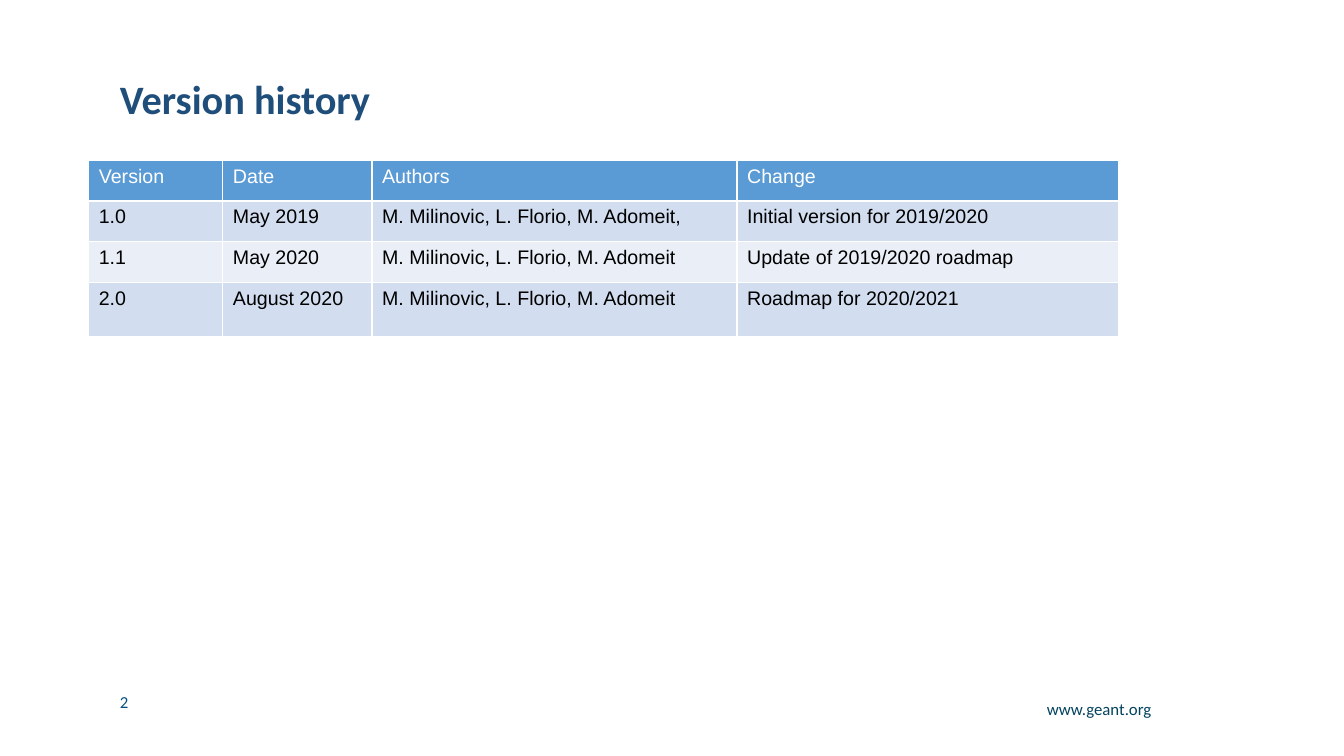
from lxml import etree
from pptx import Presentation, util as u
from pptx.dml.color import RGBColor
from pptx.enum import text
from pptx.oxml.ns import qn

HUES = {
    "title": "1E4E79", "page": "065081", "site": "03435F",
    "head": "5B9BD5", "odd": "D2DEEF", "even": "EAEFF7",
    "white": "FFFFFF", "black": "000000",
}


class Deck:
    """Holds the style and the current slide; lengths are percent of the slide."""

    def __init__(self):
        self.prs = Presentation()
        self.prs.slide_width = u.Inches(13.33)
        self.prs.slide_height = u.Inches(7.5)
        self.slide = self.prs.slides.add_slide(self.prs.slide_layouts[6])

    def wide(self, share):
        return int(self.prs.slide_width * share / 100)

    def high(self, share):
        return int(self.prs.slide_height * share / 100)

    def hue(self, name):
        return RGBColor.from_string(HUES[name])

    def style(self, para, face, size, hue, bold=False):
        for run in para.runs:
            run.font.name = face
            run.font.size = u.Pt(size)
            run.font.bold = bold
            run.font.color.rgb = self.hue(hue)

    def label(self, words, x, y, w, h, size, hue, bold=False,
              align=text.PP_ALIGN.LEFT, anchor=text.MSO_ANCHOR.TOP, space=1.0):
        box = self.slide.shapes.add_textbox(
            self.wide(x), self.high(y), self.wide(w), self.high(h))
        frame = box.text_frame
        frame.word_wrap = True
        frame.vertical_anchor = anchor
        frame.text = words
        para = frame.paragraphs[0]
        para.alignment = align
        para.line_spacing = space
        self.style(para, "Calibri", size, hue, bold)

    def border(self, cell, hue, width):
        props = cell._tc.get_or_add_tcPr()
        for side in ("lnL", "lnR", "lnT", "lnB"):
            line = etree.SubElement(props, qn("a:" + side), w=str(u.Pt(width)))
            fill = etree.SubElement(line, qn("a:solidFill"))
            etree.SubElement(fill, qn("a:srgbClr"), val=HUES[hue])

    def table(self, data, x, y, cols, rows):
        grid = self.slide.shapes.add_table(
            len(rows), len(cols), self.wide(x), self.high(y),
            self.wide(sum(cols)), self.high(sum(rows))).table
        for col, share in zip(grid.columns, cols):
            col.width = self.wide(share)
        for row, share in zip(grid.rows, rows):
            row.height = self.high(share)
        for r, line in enumerate(data):
            back = "head" if r == 0 else "odd" if r % 2 else "even"
            for c, words in enumerate(line):
                cell = grid.cell(r, c)
                self.border(cell, "white", 1)
                cell.fill.solid()
                cell.fill.fore_color.rgb = self.hue(back)
                cell.text_frame.text = words
                self.style(cell.text_frame.paragraphs[0], "Arial", 14,
                           "black" if r else "white")


def main():
    deck = Deck()
    left = 8.18

    # Title
    deck.label("Version history", left, 10.27, 81.17, 6.27, 28.8, "title",
               bold=True, anchor=text.MSO_ANCHOR.MIDDLE, space=0.9)

    # Version table
    team = "M. Milinovic, L. Florio, M. Adomeit"
    data = [
        ("Version", "Date", "Authors", "Change"),
        ("1.0", "May 2019", team + ",", "Initial version for 2019/2020"),
        ("1.1", "May 2020", team, "Update of 2019/2020 roadmap"),
        ("2.0", "August 2020", team, "Roadmap for 2020/2021"),
    ]
    deck.table(data, 6.6, 21.2, cols=(9.98, 11.1, 27.16, 28.43),
               rows=[5.4] * 3 + [7.2])

    # Footer
    deck.label("2", left, 90.8, 10.88, 4, 12, "page")
    deck.label("www.geant.org", 77.04, 91.73, 9.38, 4, 12, "site",
               align=text.PP_ALIGN.RIGHT)

    deck.prs.save("out.pptx")


if __name__ == "__main__":
    main()
